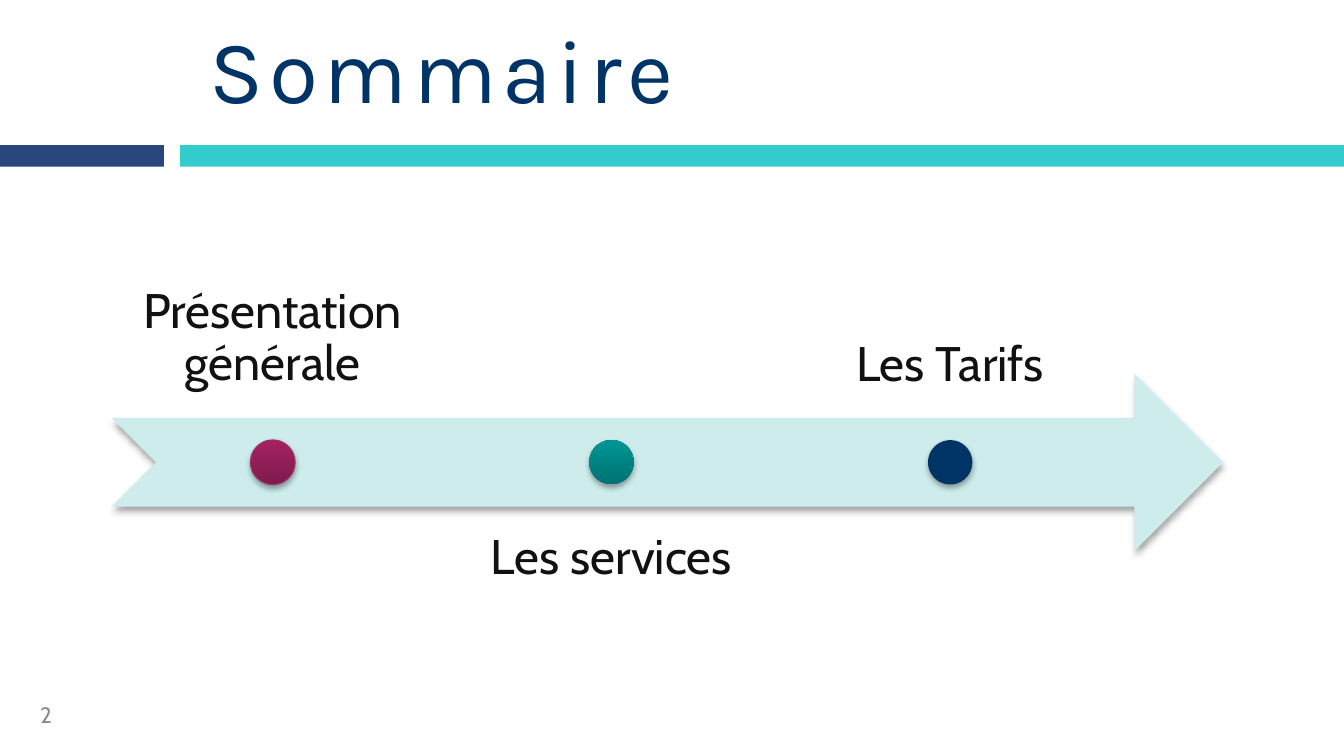
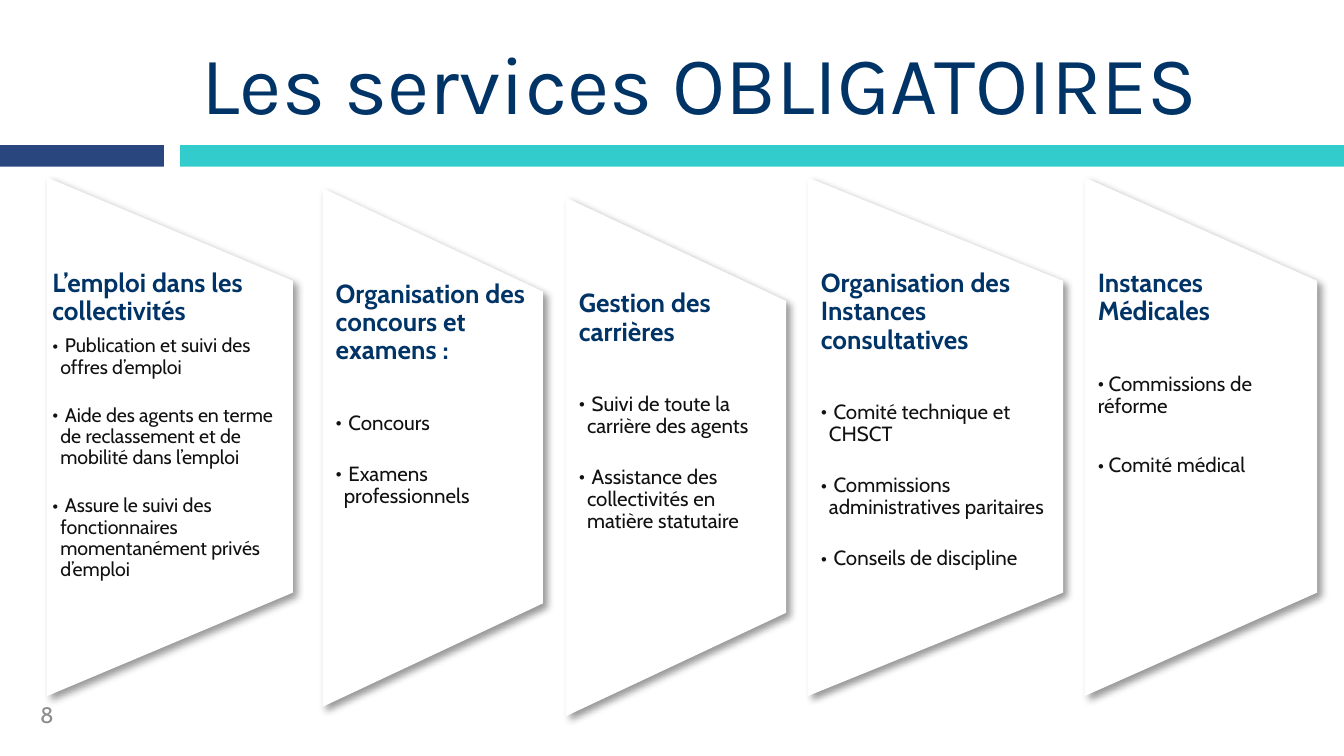
import pptx
import pptx.util
import pptx.dml.color
import pptx.enum.shapes
import pptx.enum.text
import pptx.oxml.ns
from lxml import etree

Inches = pptx.util.Inches
Pt = pptx.util.Pt
RGBColor = pptx.dml.color.RGBColor
Shape = pptx.enum.shapes.MSO_SHAPE
Anchor = pptx.enum.text.MSO_ANCHOR
Align = pptx.enum.text.PP_ALIGN
qn = pptx.oxml.ns.qn

NAVY = RGBColor(0x00, 0x33, 0x66)
BLUE = RGBColor(0x2A, 0x46, 0x7E)
TURQUOISE = RGBColor(0x33, 0xCC, 0xCC)
MINT = RGBColor(0xCE, 0xEC, 0xEC)
PLUM = RGBColor(0xA6, 0x20, 0x63)
WINE = RGBColor(0x7E, 0x1B, 0x4C)
ROSE = RGBColor(0x98, 0x2F, 0x64)
TEAL = RGBColor(0x00, 0x95, 0x95)
PINE = RGBColor(0x00, 0x72, 0x72)
INK = RGBColor(0x11, 0x11, 0x11)
GREY = RGBColor(0x8C, 0x8C, 0x8C)
WHITE = RGBColor(0xFF, 0xFF, 0xFF)

HEAD = "Karla"
BODY = "Cabin"

STEPS = [
    ("Présentation générale", PLUM, WINE, ROSE),
    ("Les services", TEAL, PINE, None),
    ("Les Tarifs", NAVY, NAVY, None),
]

CARDS = [
    dict(left=0.35, top=1.32, width=1.83, inset=0.04, size=10.5, lead=5, gap=14.5,
         title="L’emploi dans les collectivités",
         items=["Publication et suivi des offres d’emploi",
                "Aide des agents en terme de reclassement et de mobilité dans l’emploi",
                "Assure le suivi des fonctionnaires momentanément privés d’emploi"]),
    dict(left=2.4, top=1.4, width=1.64,
         title="Organisation des concours et examens :",
         items=["Concours", "Examens professionnels"]),
    dict(left=4.21, top=1.47, width=1.64,
         title="Gestion des carrières",
         items=["Suivi de toute la carrière des agents",
                "Assistance des collectivités en matière statutaire"]),
    dict(left=6.01, top=1.32, width=1.9,
         title="Organisation des Instances consultatives",
         items=["Comité technique et CHSCT",
                "Commissions administratives paritaires",
                "Conseils de discipline"]),
    dict(left=8.07, top=1.32, width=1.73, gap=20, hang=0,
         title="Instances Médicales",
         items=["Commissions de réforme", "Comité médical"]),
]


def style(para, font, size, color, bold=False):
    for run in para.runs:
        run.font.name = font
        run.font.size = Pt(size)
        run.font.color.rgb = color
        run.font.bold = bold


def shade(shape, blur, dist, angle, alpha):
    shape.shadow.inherit = False
    effects = shape._element.spPr.find(qn("a:effectLst"))
    outer = etree.SubElement(effects, qn("a:outerShdw"), blurRad=str(Pt(blur)),
                             dist=str(Pt(dist)), dir=str(angle * 60000),
                             algn="ctr", rotWithShape="0")
    color = etree.SubElement(outer, qn("a:srgbClr"), val="000000")
    etree.SubElement(color, qn("a:alpha"), val=str(alpha * 1000))


def block(slide, kind, box, color):
    shape = slide.shapes.add_shape(kind, *map(Inches, box))
    shape.shadow.inherit = False
    shape.fill.solid()
    shape.fill.fore_color.rgb = color
    shape.line.fill.background()
    return shape


def label(slide, box, text, size, color, anchor, side=0.1, edge=0.05):
    frame = slide.shapes.add_textbox(*map(Inches, box)).text_frame
    frame.word_wrap = True
    frame.vertical_anchor = anchor
    frame.margin_left = frame.margin_right = Inches(side)
    frame.margin_top = frame.margin_bottom = Inches(edge)
    frame.text = text
    style(frame.paragraphs[0], BODY, size, color)
    return frame.paragraphs[0]


def base(deck, title, box, size, indent, number, track=0):
    slide = deck.slides.add_slide(deck.slide_layouts[5])
    block(slide, Shape.RECTANGLE, (1.34, 1.08, 8.66, 0.16), TURQUOISE)
    block(slide, Shape.RECTANGLE, (0, 1.08, 1.22, 0.16), BLUE)
    head = slide.shapes.title
    head.left, head.top, head.width, head.height = map(Inches, box)
    frame = head.text_frame
    frame.text = title
    frame.word_wrap = True
    frame.auto_size = pptx.enum.text.MSO_AUTO_SIZE.NONE
    frame.vertical_anchor = Anchor.MIDDLE
    para = frame.paragraphs[0]
    para.alignment = Align.LEFT
    para._p.get_or_add_pPr().set("marL", str(Inches(indent)))
    style(para, HEAD, size, NAVY)
    if track:
        para.runs[0]._r.get_or_add_rPr().set("spc", str(track * 100))
    label(slide, (0.2, 5.17, 2.33, 0.3), number, 12, GREY, Anchor.MIDDLE)
    return slide


def dot(slide, box, light, dark, edge):
    shape = block(slide, Shape.OVAL, box, light)
    if light != dark:
        shape.fill.gradient()
        shape.fill.gradient_angle = 90
        first, last = shape.fill.gradient_stops
        first.color.rgb, last.color.rgb = dark, light
        first.position, last.position = 0, 1
    if edge:
        shape.line.color.rgb = edge
        shape.line.width = Pt(0.75)
    shade(shape, 3.1, 1.8, 90, 35)


def road(slide, left, top, width, height):
    arrow = block(slide, Shape.NOTCHED_RIGHT_ARROW, (left, top, width, height), MINT)
    shade(arrow, 3.1, 1.8, 90, 35)
    wide, pitch, size = 2.4, 2.52, 0.33
    for i, (text, light, dark, edge) in enumerate(STEPS):
        x = left + i * pitch
        above = i % 2 == 0
        y = top - 0.99 if above else top + 0.99
        para = label(slide, (x, y, wide, height), text, 26, INK,
                     Anchor.BOTTOM if above else Anchor.TOP, 0.2, 0.2)
        para.alignment = Align.CENTER
        para.line_spacing = 0.9
        dot(slide, (x + (wide - size) / 2, top + (height - size) / 2, size, size),
            light, dark, edge)


def card(slide, left, top, width, title, items,
         inset=0.1, size=11, lead=25, gap=15.5, hang=0.06):
    height, slope = 3.86, 0.77
    right, foot = left + width, top + height
    path = slide.shapes.build_freeform(Inches(left), Inches(foot))
    corners = [(left, top), (right, top + slope), (right, foot - slope)]
    path.add_line_segments([(Inches(x), Inches(y)) for x, y in corners], close=True)
    shape = path.convert_to_shape()
    shape.fill.solid()
    shape.fill.fore_color.rgb = WHITE
    shape.line.fill.background()
    shade(shape, 4, 3, 45, 40)
    frame = shape.text_frame
    frame.word_wrap = True
    frame.vertical_anchor = Anchor.TOP
    frame.margin_left = frame.margin_right = Inches(inset)
    frame.margin_top = frame.margin_bottom = Inches(0.69)
    frame.text = "\n".join([title] + [f" {item}" for item in items])
    for i, para in enumerate(frame.paragraphs):
        para.alignment = Align.LEFT
        para.line_spacing = 0.9
        if i == 0:
            style(para, BODY, 14, NAVY, True)
            continue
        para.space_before = Pt(lead if i == 1 else gap)
        props = para._p.get_or_add_pPr()
        props.set("marL", str(Inches(hang)))
        props.set("indent", str(-Inches(hang)))
        etree.SubElement(props, qn("a:buFont"), typeface=BODY)
        etree.SubElement(props, qn("a:buChar"), char="•")
        style(para, BODY, size, INK)


def main():
    deck = pptx.Presentation()
    deck.slide_width = Inches(10)
    deck.slide_height = deck.slide_width * 9 // 16
    agenda = base(deck, "Sommaire", (1.06, 0.08, 7.72, 0.84), 48, 0.4, "2", 3)
    road(agenda, 0.83, 2.78, 8.27, 1.32)
    duties = base(deck, "Les services OBLIGATOIRES", (0.91, 0.14, 8.75, 0.94), 44, 0.49, "8")
    for part in CARDS:
        card(duties, **part)
    deck.save("out.pptx")


if __name__ == "__main__":
    main()
